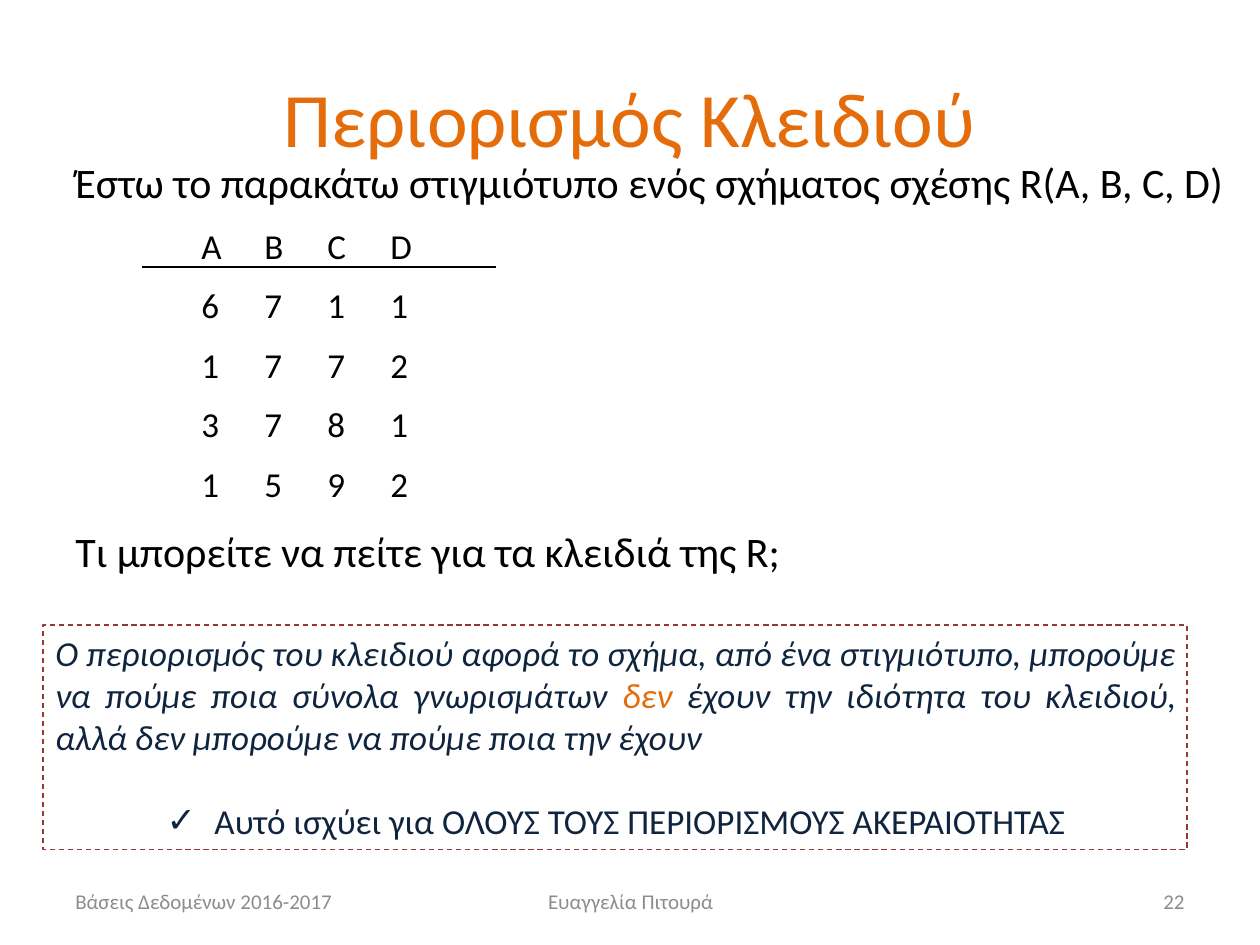
from dataclasses import dataclass

from lxml import etree
from pptx import Presentation
from pptx.dml.color import RGBColor
from pptx.enum.dml import MSO_LINE
from pptx.enum.shapes import MSO_CONNECTOR as CONN, MSO_SHAPE as SHAPE
from pptx.enum.text import MSO_ANCHOR as ANCHOR, PP_ALIGN as ALIGN
from pptx.oxml.ns import qn
from pptx.util import Inches, Pt


@dataclass(frozen=True)
class Theme:
    font: str = "Calibri"
    accent: str = "E46C0A"
    ink: str = "000000"
    navy: str = "0F243E"
    border: str = "953735"
    muted: str = "8C8C8C"
    title: int = 44
    lead: int = 24
    body: int = 20
    small: int = 12
    hairline: float = 0.75


THEME = Theme()


def add_run(p, text, size, color, **fmt):
    r = p.add_run()
    r.text = text
    r.font.color.rgb = RGBColor.from_string(color)
    for name, value in {"name": THEME.font, "size": Pt(size), **fmt}.items():
        setattr(r.font, name, value)


def set_indent(p, left, first):
    pPr = p._p.get_or_add_pPr()
    pPr.set("marL", str(Inches(left)))
    pPr.set("indent", str(Inches(first)))
    return pPr


def add_text_box(slide, box, anchor=ANCHOR.TOP):
    tf = slide.shapes.add_textbox(*map(Inches, box)).text_frame
    tf.word_wrap = True
    tf.vertical_anchor = anchor
    return tf


def add_title(slide, box, text):
    sp = slide.shapes.title
    sp.left, sp.top, sp.width, sp.height = map(Inches, box)
    tf = sp.text_frame
    tf.vertical_anchor = ANCHOR.MIDDLE
    p = tf.paragraphs[0]
    p.alignment = ALIGN.CENTER
    add_run(p, text, THEME.title, THEME.accent)


def add_relation(slide, box, lead, rows, question):
    """Lead sentence, tabbed relation instance with a header rule, question."""
    left, top = box[:2]
    tab = 0.5
    lines = [(lead, THEME.lead)]
    lines += [("\t\t" + "\t".join(row), THEME.body) for row in rows]
    lines.append((question, THEME.lead))

    tf = add_text_box(slide, box)
    for i, (text, size) in enumerate(lines):
        p = tf.add_paragraph() if i else tf.paragraphs[0]
        p.space_before = Pt(size / 2 if i else 0)
        set_indent(p, tab, -tab).set("defTabSz", str(Inches(tab)))
        add_run(p, text, size, THEME.ink)

    # Rule under the column names
    x, y = left + 0.63, top + 0.93
    rule = slide.shapes.add_connector(
        CONN.STRAIGHT, *map(Inches, (x, y, x + 2.81, y)))
    rule.line.color.rgb = RGBColor.from_string(THEME.ink)
    rule.line.width = Pt(THEME.hairline)
    etree.SubElement(rule._element.spPr, qn("a:effectLst"))


def add_note(slide, box, parts, bullet):
    """Dashed box with an italic remark and a check-marked conclusion."""
    sp = slide.shapes.add_shape(SHAPE.RECTANGLE, *map(Inches, box))
    sp.shadow.inherit = False
    sp.fill.background()
    sp.line.color.rgb = RGBColor.from_string(THEME.border)
    sp.line.width = Pt(THEME.hairline)
    sp.line.dash_style = MSO_LINE.DASH
    tf = sp.text_frame
    tf.word_wrap = True
    tf.vertical_anchor = ANCHOR.TOP
    tf.margin_right = Inches(0.08)  # lets the first line hold its last word

    p = tf.paragraphs[0]
    p.alignment = ALIGN.JUSTIFY
    for text, color in parts:
        add_run(p, text, THEME.body, color, italic=True)

    p = tf.add_paragraph()
    p.alignment = ALIGN.CENTER
    p.space_before = Pt(24)
    pPr = set_indent(p, 0.38, -0.38)
    etree.SubElement(pPr, qn("a:buFont")).set("typeface", THEME.font)
    etree.SubElement(pPr, qn("a:buChar")).set("char", "✓")
    add_run(p, bullet, THEME.body, THEME.navy)


def add_footer(slide, top, height, items):
    for left, width, align, text in items:
        tf = add_text_box(slide, (left, top, width, height), ANCHOR.MIDDLE)
        p = tf.paragraphs[0]
        p.alignment = align
        add_run(p, text, THEME.small, THEME.muted)


def main():
    prs = Presentation()
    prs.slide_width, prs.slide_height = Inches(10), Inches(7.5)
    slide = prs.slides.add_slide(prs.slide_layouts[5])

    add_relation(
        slide, (0.5, 1.19, 9.37, 3.64),
        "Έστω το παρακάτω στιγμιότυπο ενός σχήματος σχέσης R(A, B, C, D)",
        ["ΑΒCD", "6711", "1772", "3781", "1592"],
        "Τι μπορείτε να πείτε για τα κλειδιά της R;")
    add_note(
        slide, (0.34, 4.96, 9.08, 1.78),
        [("Ο περιορισμός του κλειδιού αφορά το σχήμα, από ένα στιγμιότυπο, "
          "μπορούμε να πούμε ποια σύνολα γνωρισμάτων ", THEME.navy),
         ("δεν", THEME.accent),
         (" έχουν την ιδιότητα του κλειδιού, αλλά δεν μπορούμε να πούμε "
          "ποια την έχουν", THEME.navy)],
        "Αυτό ισχύει για ΟΛΟΥΣ ΤΟΥΣ ΠΕΡΙΟΡΙΣΜΟΥΣ ΑΚΕΡΑΙΟΤΗΤΑΣ")
    add_title(slide, (0.5, 0.3, 9, 1.25), "Περιορισμός Κλειδιού")
    add_footer(slide, 6.95, 0.4, [
        (0.5, 2.33, ALIGN.LEFT, "Βάσεις Δεδομένων 2016-2017"),
        (3.42, 3.17, ALIGN.CENTER, "Ευαγγελία Πιτουρά"),
        (7.17, 2.33, ALIGN.RIGHT, "22"),
    ])
    prs.save("out.pptx")


if __name__ == "__main__":
    main()
